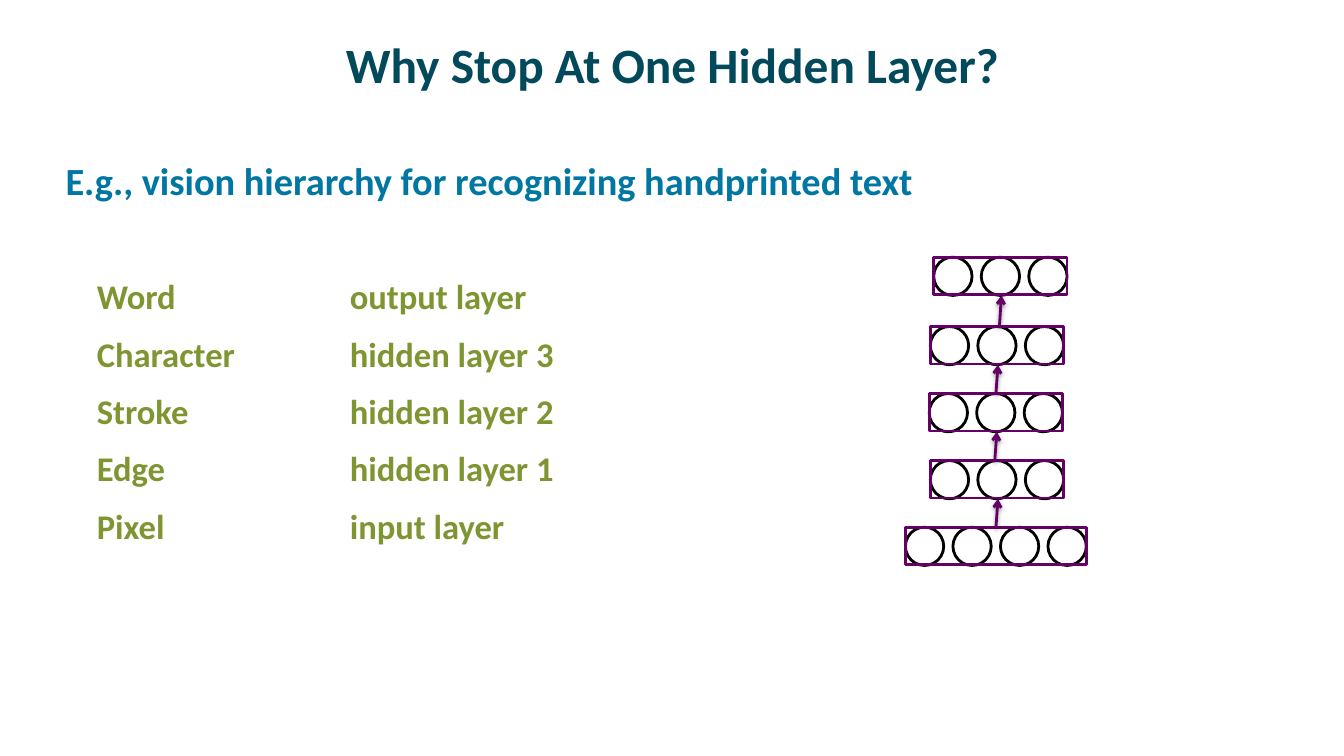
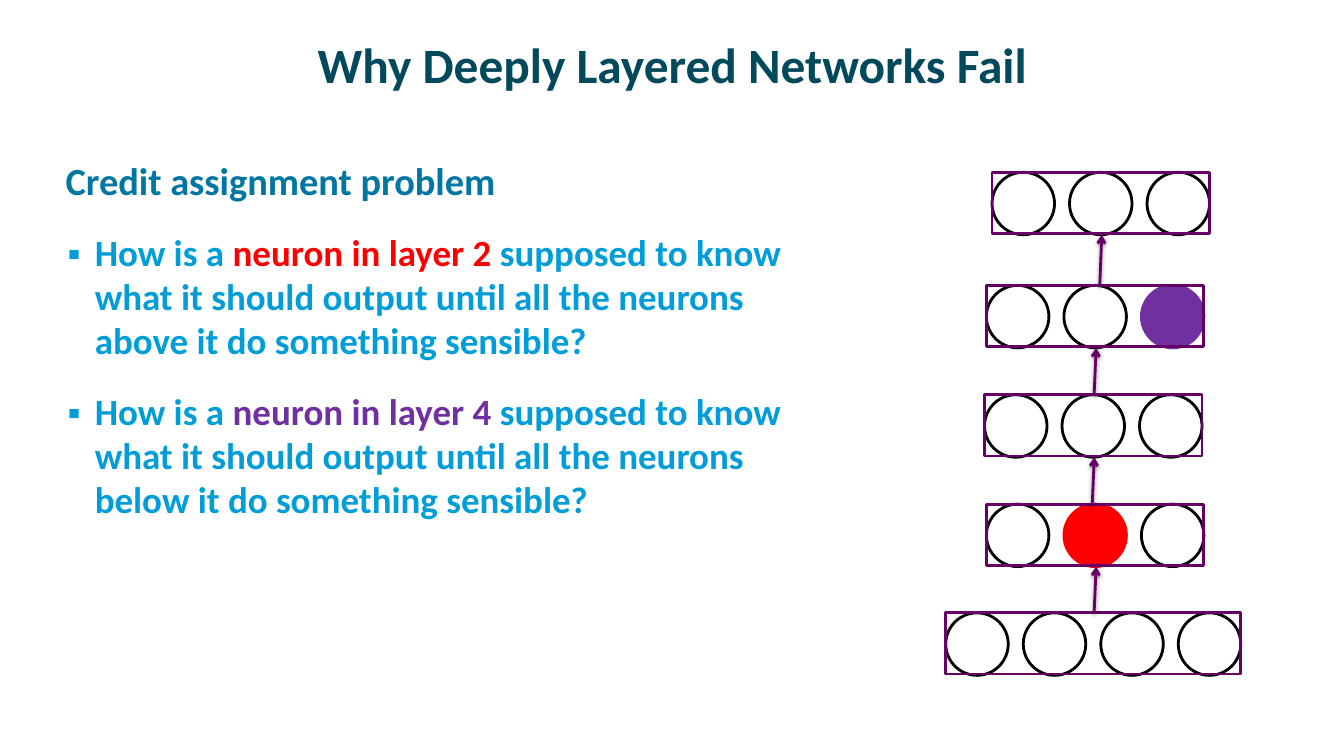
from lxml import etree
from pptx import Presentation
from pptx.dml.color import RGBColor
from pptx.enum.shapes import MSO_CONNECTOR, MSO_SHAPE
from pptx.enum.text import MSO_ANCHOR, MSO_AUTO_SIZE, PP_ALIGN
from pptx.oxml import parse_xml
from pptx.oxml.ns import nsdecls, qn
from pptx.util import Inches, Pt

OVAL, RECT = MSO_SHAPE.OVAL, MSO_SHAPE.RECTANGLE
LINE = MSO_CONNECTOR.STRAIGHT
MIDDLE, CENTER = MSO_ANCHOR.MIDDLE, PP_ALIGN.CENTER
FIXED = MSO_AUTO_SIZE.NONE

FONT = "Calibri"
NAVY, TEAL, SKY, OLIVE = "03495C", "0076A3", "009DD9", "7E9632"
PLUM, RED, VIOLET = "660066", "FF0000", "7030A0"
BLACK, WHITE = "000000", "FFFFFF"

SHADOW = f"""<a:effectLst {nsdecls("a")}>
  <a:outerShdw blurRad="39370" dist="20320" dir="5400000" rotWithShape="0">
    <a:srgbClr val="{BLACK}"><a:alpha val="38000"/></a:srgbClr>
  </a:outerShdw>
</a:effectLst>"""

# Network layers, bottom up, in circle widths: nodes, left, rise
LAYERS = [(4, 0, 0), (3, 0.65, 1.74), (3, 0.62, 3.49),
          (3, 0.65, 5.24), (3, 0.74, 7.05)]
STEP = 1.24

# Slides: title, lead line, body width, table rows, bullets, network
SLIDES = [
    dict(title="Why Stop At One Hidden Layer?",
         lead="E.g., vision hierarchy for recognizing handprinted text",
         width=12.22,
         rows=[("Word", "output layer"), ("Character", "hidden layer 3"),
               ("Stroke", "hidden layer 2"), ("Edge", "hidden layer 1"),
               ("Pixel", "input layer")],
         points=[],
         left=8.98, base=5.23, size=0.38, marks={}),
    dict(title="Why Deeply Layered Networks Fail",
         lead="Credit assignment problem",
         width=7.77,
         rows=[],
         points=[("neuron in layer 2 ", RED, "above"),
                 ("neuron in layer 4 ", VIOLET, "below")],
         left=9.38, base=6.08, size=0.62,
         marks={(1, 1): RED, (3, 2): VIOLET}),
]


def rgb(hue):
    return RGBColor.from_string(hue)


def style(para, size, hues, gap=0, lead=1.0):
    """Format the runs of a paragraph and its spacing."""
    para.space_before, para.line_spacing = Pt(gap), lead
    for run, hue in zip(para.runs, hues):
        run.font.name, run.font.size, run.font.bold = FONT, Pt(size), True
        run.font.color.rgb = rgb(hue)
    return para._p.get_or_add_pPr()


deck = Presentation()
deck.slide_width, deck.slide_height = Inches(13.33), Inches(7.5)
layout = deck.slide_layouts[1]

# Shared frames for title and body
for holder, box in zip(layout.placeholders,
                       [(0.67, 0.17, 12, 0.92), (0.44, 1.52, 12.22, 5.2)]):
    holder.left, holder.top, holder.width, holder.height = map(Inches, box)

for page in SLIDES:
    slide = deck.slides.add_slide(layout)
    head, body = slide.placeholders
    for holder in (head, body):
        frame = holder.text_frame
        frame.auto_size, frame.word_wrap = FIXED, True
        frame.margin_left = frame.margin_right = Inches(0.11)
        frame.margin_top = frame.margin_bottom = Inches(0.06)

    # Title
    head.text_frame.text = page["title"]
    head.text_frame.vertical_anchor = MIDDLE
    para = head.text_frame.paragraphs[0]
    para.alignment = CENTER
    style(para, 35.3, [NAVY])

    # Lead line
    x, y, tall = body.left, body.top, body.height
    body.left, body.top = x, y
    body.width, body.height = Inches(page["width"]), tall
    text = body.text_frame
    text.text = page["lead"]
    props = style(text.paragraphs[0], 27.4, [TEAL], 0, 0.98)
    props.set("marL", str(Inches(0.1)))
    props.set("indent", "0")
    etree.SubElement(props, qn("a:buNone"))

    # Plain table of levels and layers
    rows = page["rows"]
    if rows:
        grid = slide.shapes.add_table(
            len(rows), 2, Inches(0.96), Inches(2.67),
            Inches(5.02), Inches(0.57 * len(rows))).table
        grid.first_row = grid.horz_banding = False
        for r, row in enumerate(rows):
            for c, word in enumerate(row):
                cell = grid.cell(r, c)
                cell.fill.background()
                cell.vertical_anchor = MIDDLE
                cell.margin_left = cell.margin_right = 0
                cell.margin_top = cell.margin_bottom = 0
                cell.text_frame.text = word
                style(cell.text_frame.paragraphs[0], 24.7, [OLIVE])

    # Bullets with one coloured phrase each
    for phrase, hue, side in page["points"]:
        para = text.add_paragraph()
        for part in ("How is a ", phrase,
                     "supposed to know what it should output until all "
                     f"the neurons {side} it do something sensible?"):
            para.add_run().text = part
        props = style(para, 26.4, [SKY, hue, SKY], 19.5, 0.99)
        props.set("marL", str(Inches(0.39)))
        props.set("indent", str(Inches(-0.27)))
        etree.SubElement(props, qn("a:buChar"), char="▪")

    # Network layers
    net = slide.shapes.add_group_shape().shapes
    size, marks = page["size"], page["marks"]
    spots = []
    for row, (count, shift, rise) in enumerate(LAYERS):
        x = page["left"] + shift * size
        y = page["base"] - rise * size
        wide = ((count - 1) * STEP + 1) * size
        spots.append((x + wide / 2, y))
        parts = [(OVAL, x + col * STEP * size, size, size,
                  marks.get((row, col), WHITE),
                  marks.get((row, col), BLACK)) for col in range(count)]
        parts.append((RECT, x, wide, 0.98 * size, None, PLUM))
        for kind, left, w, h, fill, edge in parts:
            node = net.add_shape(kind, Inches(left), Inches(y),
                                 Inches(w), Inches(h))
            node.shadow.inherit = False
            node.line.color.rgb, node.line.width = rgb(edge), Pt(2)
            if fill:
                node.fill.solid()
                node.fill.fore_color.rgb = rgb(fill)
            else:
                node.fill.background()

    # Arrows from each layer to the one above
    for (_, low), (mid, high) in zip(spots, spots[1:]):
        link = net.add_connector(LINE, Inches(mid - 0.01), Inches(low),
                                 Inches(mid + 0.01), Inches(high + size))
        link.line.color.rgb, link.line.width = rgb(PLUM), Pt(2)
        etree.SubElement(link.line._get_or_add_ln(), qn("a:tailEnd"),
                         type="arrow")
        link._element.spPr.append(parse_xml(SHADOW))

deck.save("out.pptx")
